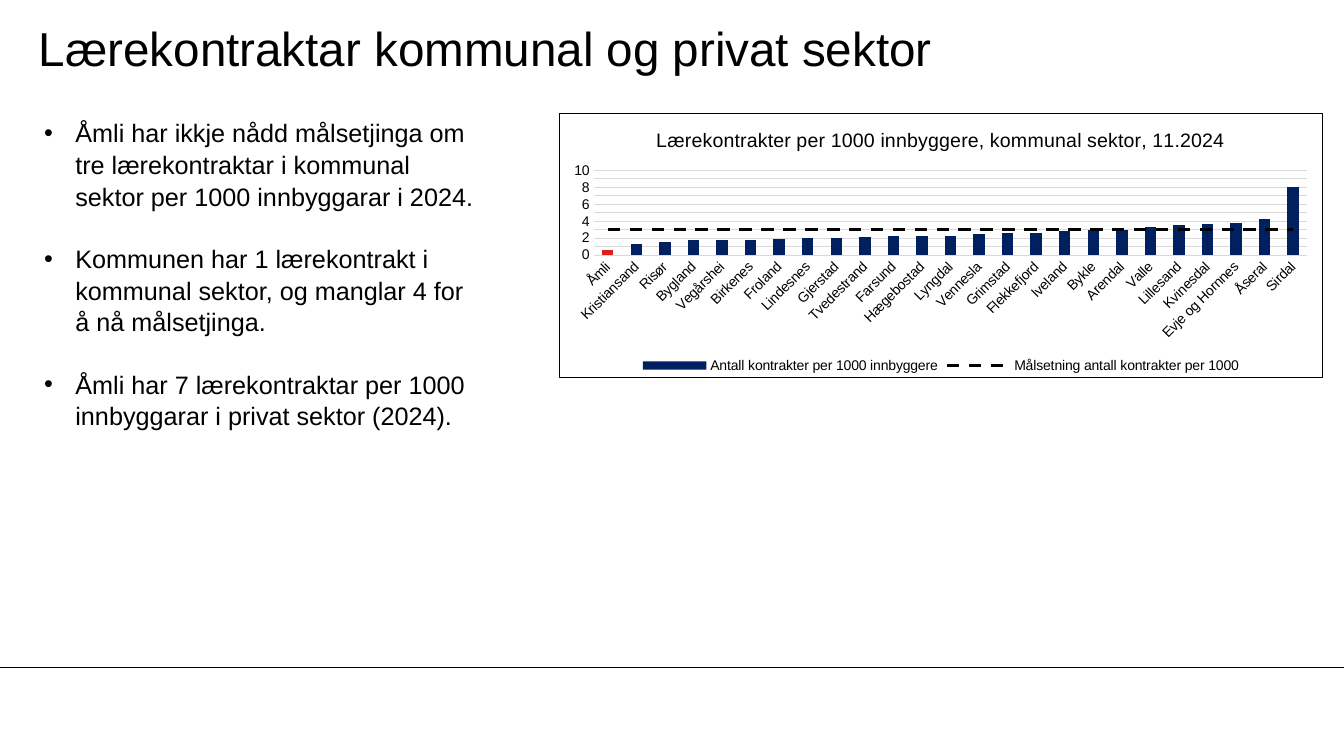
from lxml import etree
from pptx import Presentation
from pptx import util as u
from pptx.chart.data import CategoryChartData
from pptx.dml.color import RGBColor
from pptx.enum import chart as ch, dml, shapes, text
from pptx.oxml import parse_xml
from pptx.oxml.ns import nsdecls, qn

BLACK = RGBColor(0x00, 0x00, 0x00)
NAVY = RGBColor(0x00, 0x20, 0x60)
RED = RGBColor(0xDF, 0x1F, 0x1D)
GREY = RGBColor(0xD9, 0xD9, 0xD9)
FONT = "Arial"
WIDTH, HEIGHT = u.Inches(13.33), u.Inches(7.5)
TARGET = 3

TITLE = "Lærekontraktar kommunal og privat sektor"
FINDINGS = [
    "Åmli har ikkje nådd målsetjinga om tre lærekontraktar i kommunal sektor per 1000 innbyggarar i 2024.",
    "Kommunen har 1 lærekontrakt i kommunal sektor, og manglar 4 for å nå målsetjinga.",
    "Åmli har 7 lærekontraktar per 1000 innbyggarar i privat sektor (2024).",
]
CHART_TITLE = "Lærekontrakter per 1000 innbyggere, kommunal sektor, 11.2024"
CONTRACTS = {
    "Åmli": 0.6, "Kristiansand": 1.3, "Risør": 1.5, "Bygland": 1.8, "Vegårshei": 1.8,
    "Birkenes": 1.8, "Froland": 1.9, "Lindesnes": 2, "Gjerstad": 2, "Tvedestrand": 2.1,
    "Farsund": 2.3, "Hægebostad": 2.3, "Lyngdal": 2.3, "Vennesla": 2.5, "Grimstad": 2.6,
    "Flekkefjord": 2.6, "Iveland": 2.9, "Bykle": 3, "Arendal": 3, "Valle": 3.3,
    "Lillesand": 3.6, "Kvinesdal": 3.7, "Evje og Hornnes": 3.8, "Åseral": 4.3, "Sirdal": 8,
}


def share(left, top, width, height):
    return (round(WIDTH * left), round(HEIGHT * top),
            round(WIDTH * width), round(HEIGHT * height))


def set_font(font, size):
    font.name = FONT
    font.size = u.Pt(size)
    font.bold = False
    font.color.rgb = BLACK


def set_line(line, color, width):
    line.color.rgb = color
    line.width = u.Pt(width)


def add_title(slide, box):
    title = slide.shapes.title
    title.left, title.top, title.width, title.height = box
    frame = title.text_frame
    frame.text = TITLE
    frame.auto_size = text.MSO_AUTO_SIZE.NONE
    frame.vertical_anchor = text.MSO_ANCHOR.MIDDLE
    frame.margin_left = frame.margin_right = frame.margin_top = frame.margin_bottom = 0
    heading = frame.paragraphs[0]
    heading.alignment = text.PP_ALIGN.LEFT
    set_font(heading.runs[0].font, 34)


def add_findings(slide, box):
    frame = slide.shapes.add_textbox(*box).text_frame
    frame.word_wrap = True
    frame.text = "\n".join(FINDINGS)
    for index, finding in enumerate(frame.paragraphs):
        properties = finding._p.get_or_add_pPr()
        properties.set("marL", str(u.Inches(0.31)))
        properties.set("indent", str(-u.Inches(0.31)))
        etree.SubElement(properties, qn("a:buFont")).set("typeface", FONT)
        etree.SubElement(properties, qn("a:buChar")).set("char", "•")
        finding.line_spacing = 1.05
        if index:
            finding.space_before = u.Pt(21.7)
        set_font(finding.runs[0].font, 18)


def move_target_to_line(chart):
    columns = chart.element.xpath(".//c:barChart")[0]
    target = columns.findall(qn("c:ser"))[1]
    for invert in target.findall(qn("c:invertIfNegative")):
        target.remove(invert)
    line_plot = parse_xml(
        f'<c:lineChart {nsdecls("c")}><c:grouping val="standard"/>'
        '<c:varyColors val="0"/><c:marker val="1"/></c:lineChart>')
    line_plot.insert(2, target)
    for axis in columns.findall(qn("c:axId")):
        etree.SubElement(line_plot, qn("c:axId")).set("val", axis.get("val"))
    columns.addnext(line_plot)
    line = chart.plots[1].series[0]
    line.smooth = False
    line.marker.style = ch.XL_MARKER_STYLE.NONE
    set_line(line.format.line, BLACK, 2.25)
    line.format.line.dash_style = dml.MSO_LINE.DASH


def format_axes(chart):
    municipalities, rate = chart.category_axis, chart.value_axis
    for axis in (municipalities, rate):
        axis.major_tick_mark = axis.minor_tick_mark = ch.XL_TICK_MARK.NONE
        set_font(axis.tick_labels.font, 10)
    set_line(municipalities.format.line, GREY, 0.75)
    chart.element.xpath(".//c:catAx/c:txPr/a:bodyPr")[0].set("rot", "-2700000")
    rate.minimum_scale, rate.maximum_scale, rate.major_unit = 0, 10, 1
    rate.tick_labels.number_format = "0"
    rate.tick_labels.number_format_is_linked = False
    rate.format.line.fill.background()
    set_line(rate.major_gridlines.format.line, GREY, 0.75)


def add_contract_chart(slide, box):
    data = CategoryChartData()
    data.categories = list(CONTRACTS)
    data.add_series("Antall kontrakter per 1000 innbyggere", list(CONTRACTS.values()))
    data.add_series("Målsetning antall kontrakter per 1000", [TARGET] * len(CONTRACTS))
    chart = slide.shapes.add_chart(ch.XL_CHART_TYPE.COLUMN_CLUSTERED, *box, data).chart
    set_font(chart.font, 10)
    chart.has_title = True
    chart.chart_title.text_frame.text = CHART_TITLE
    set_font(chart.chart_title.text_frame.paragraphs[0].runs[0].font, 14)
    chart.chart_title.include_in_layout = False
    chart.has_legend = True
    chart.legend.position = ch.XL_LEGEND_POSITION.BOTTOM
    chart.legend.include_in_layout = False
    set_font(chart.legend.font, 10)

    plot = chart.plots[0]
    plot.gap_width = 150
    plot.vary_by_categories = False
    contracts = plot.series[0]
    for part, color in ((contracts, NAVY), (contracts.points[0], RED)):
        part.format.fill.solid()
        part.format.fill.fore_color.rgb = color
    move_target_to_line(chart)
    format_axes(chart)
    chart.element.find(qn("c:chart")).addnext(parse_xml(
        f'<c:spPr {nsdecls("c", "a")}><a:solidFill><a:srgbClr val="FFFFFF"/></a:solidFill>'
        f'<a:ln w="{u.Pt(0.75)}"><a:solidFill><a:srgbClr val="{BLACK}"/></a:solidFill></a:ln>'
        '</c:spPr>'))


def add_footer_rule(slide, box):
    left, top, width, height = box
    rule = slide.shapes.add_connector(
        shapes.MSO_CONNECTOR.STRAIGHT, left, top, left + width, top + height)
    set_line(rule.line, BLACK, 0.75)
    etree.SubElement(rule._element.spPr, qn("a:effectLst"))


def main():
    deck = Presentation()
    deck.slide_width, deck.slide_height = WIDTH, HEIGHT
    slide = deck.slides.add_slide(deck.slide_layouts[5])
    add_footer_rule(slide, share(0, 0.883, 1, 0))
    add_title(slide, share(0.029, 0.013, 0.833, 0.1))
    add_findings(slide, share(0.0255, 0.147, 0.336, 0.539))
    add_contract_chart(slide, share(0.4156, 0.149, 0.569, 0.351))
    deck.save("out.pptx")


if __name__ == "__main__":
    main()
